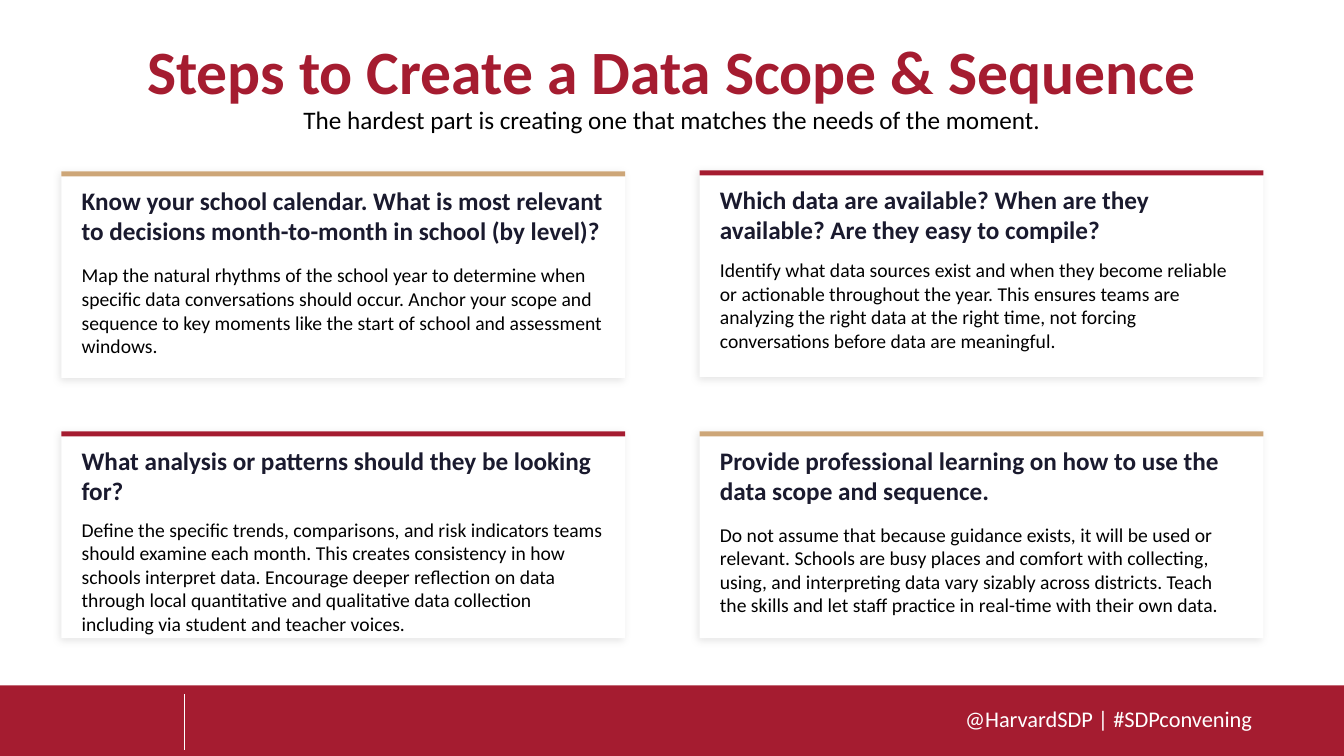
"""Build the slide on the steps to create a data scope and sequence."""
from lxml.etree import SubElement
from pptx import Presentation
from pptx.dml.color import RGBColor
from pptx.enum.shapes import MSO_CONNECTOR, MSO_SHAPE
from pptx.enum.text import MSO_ANCHOR, MSO_AUTO_SIZE, PP_ALIGN
from pptx.oxml.ns import qn
from pptx.util import Inches, Pt

CRIMSON = RGBColor(0xA5, 0x1C, 0x30)
GOLD = RGBColor(0xCD, 0xA6, 0x78)
NAVY = RGBColor(0x1A, 0x1A, 0x2E)
BLACK = RGBColor(0, 0, 0)
WHITE = RGBColor(0xFF, 0xFF, 0xFF)


def write_text(holder, text, *, size, color, bold=False, align=PP_ALIGN.LEFT,
               anchor=MSO_ANCHOR.TOP, insets=(0, 0, 0, 0), spacing=1.0):
    frame = holder.text_frame
    frame.word_wrap = True
    frame.auto_size = MSO_AUTO_SIZE.NONE
    frame.vertical_anchor = anchor
    (frame.margin_left, frame.margin_top,
     frame.margin_right, frame.margin_bottom) = map(Inches, insets)
    paragraph = frame.paragraphs[0]
    paragraph.alignment = align
    paragraph.line_spacing = spacing
    paragraph.space_before = Pt(0)
    run = paragraph.add_run()
    run.text = text
    run.font.name = "Calibri"
    run.font.size = Pt(size)
    run.font.bold = bold
    run.font.color.rgb = color


def add_block(shapes, left, top, width, height, color):
    block = shapes.add_shape(MSO_SHAPE.RECTANGLE, Inches(left), Inches(top),
                             Inches(width), Inches(height))
    block.fill.solid()
    block.fill.fore_color.rgb = color
    block.line.fill.background()
    block.shadow.inherit = False
    return block


presentation = Presentation()
presentation.slide_width = Inches(13.33)
presentation.slide_height = Inches(7.5)
slide = presentation.slides.add_slide(presentation.slide_layouts[1])
shapes = slide.shapes

title = shapes.title
title.left, title.top, title.width, title.height = map(Inches, (0, 0.28, 13.33, 0.91))
write_text(title, "Steps to Create a Data Scope & Sequence", size=44, color=CRIMSON,
           bold=True, align=PP_ALIGN.CENTER, anchor=MSO_ANCHOR.MIDDLE,
           insets=(0.1, 0.05, 0.1, 0.05), spacing=0.9)

subtitle = slide.placeholders[1]
subtitle.left, subtitle.top, subtitle.width, subtitle.height = map(
    Inches, (0, 1.02, 13.33, 0.65))
subtitle_format = subtitle.text_frame.paragraphs[0]._p.get_or_add_pPr()
subtitle_format.set("marL", "0")
subtitle_format.set("indent", "0")
SubElement(subtitle_format, qn("a:buNone"))
write_text(subtitle, "The hardest part is creating one that matches the needs of the moment.",
           size=18, color=BLACK, align=PP_ALIGN.CENTER,
           insets=(0.1, 0.05, 0.1, 0.05), spacing=0.9)

add_block(shapes, 0, 6.8, 13.33, 0.7, CRIMSON)
hashtag = shapes.add_textbox(Inches(8.39), Inches(6.95), Inches(4.03), Inches(0.37))
write_text(hashtag, "@HarvardSDP | #SDPconvening", size=16, color=WHITE,
           align=PP_ALIGN.RIGHT, insets=(0.1, 0.05, 0, 0.05))
footer_divider = shapes.add_connector(MSO_CONNECTOR.STRAIGHT, Inches(1.83), Inches(6.89),
                                      Inches(1.83), Inches(7.44))
footer_divider.line.color.rgb = WHITE
footer_divider.line.width = Pt(0.5)
SubElement(footer_divider._element.spPr, qn("a:effectLst"))

steps = [
    (0.61, 1.7, GOLD, 0.71,
     "Know your school calendar. What is most relevant to decisions month-to-month "
     "in school (by level)?",
     "Map the natural rhythms of the school year to determine when specific data "
     "conversations should occur. Anchor your scope and sequence to key moments like "
     "the start of school and assessment windows."),
    (6.94, 1.69, CRIMSON, 0.67,
     "Which data are available? When are they available? Are they easy to compile?",
     "Identify what data sources exist and when they become reliable or actionable "
     "throughout the year. This ensures teams are analyzing the right data at the right "
     "time, not forcing conversations before data are meaningful."),
    (0.61, 4.28, CRIMSON, 0.77,
     "What analysis or patterns should they be looking for?",
     "Define the specific trends, comparisons, and risk indicators teams should examine "
     "each month. This creates consistency in how schools interpret data. Encourage "
     "deeper reflection on data through local quantitative and qualitative data "
     "collection including via student and teacher voices."),
    (6.94, 4.28, GOLD, 0.7,
     "Provide professional learning on how to use the data scope and sequence.",
     "Do not assume that because guidance exists, it will be used or relevant. Schools "
     "are busy places and comfort with collecting, using, and interpreting data vary "
     "sizably across districts. Teach the skills and let staff practice in real-time "
     "with their own data."),
]

for left, top, accent, detail_offset, question, detail in steps:
    card = shapes.add_group_shape().shapes
    panel = add_block(card, left, top, 5.59, 2.05, WHITE)
    effects = panel._element.spPr.find(qn("a:effectLst"))
    shadow = SubElement(effects, qn("a:outerShdw"), blurRad=str(Pt(6)), dist=str(Pt(2)),
                        dir=str(135 * 60000), algn="bl", rotWithShape="0")
    shade = SubElement(shadow, qn("a:srgbClr"), val=str(BLACK))
    SubElement(shade, qn("a:alpha"), val="10000")
    add_block(card, left, top, 5.59, 0.05, accent)

    for text, offset, height, size, color, bold in (
            (question, 0.18, 0.52, 18, NAVY, True),
            (detail, detail_offset, 1.34, 14, BLACK, False)):
        passage = card.add_textbox(Inches(left + 0.2), Inches(top + offset),
                                   Inches(5.18), Inches(height))
        write_text(passage, text, size=size, color=color, bold=bold,
                   anchor=MSO_ANCHOR.MIDDLE)

presentation.save("out.pptx")
